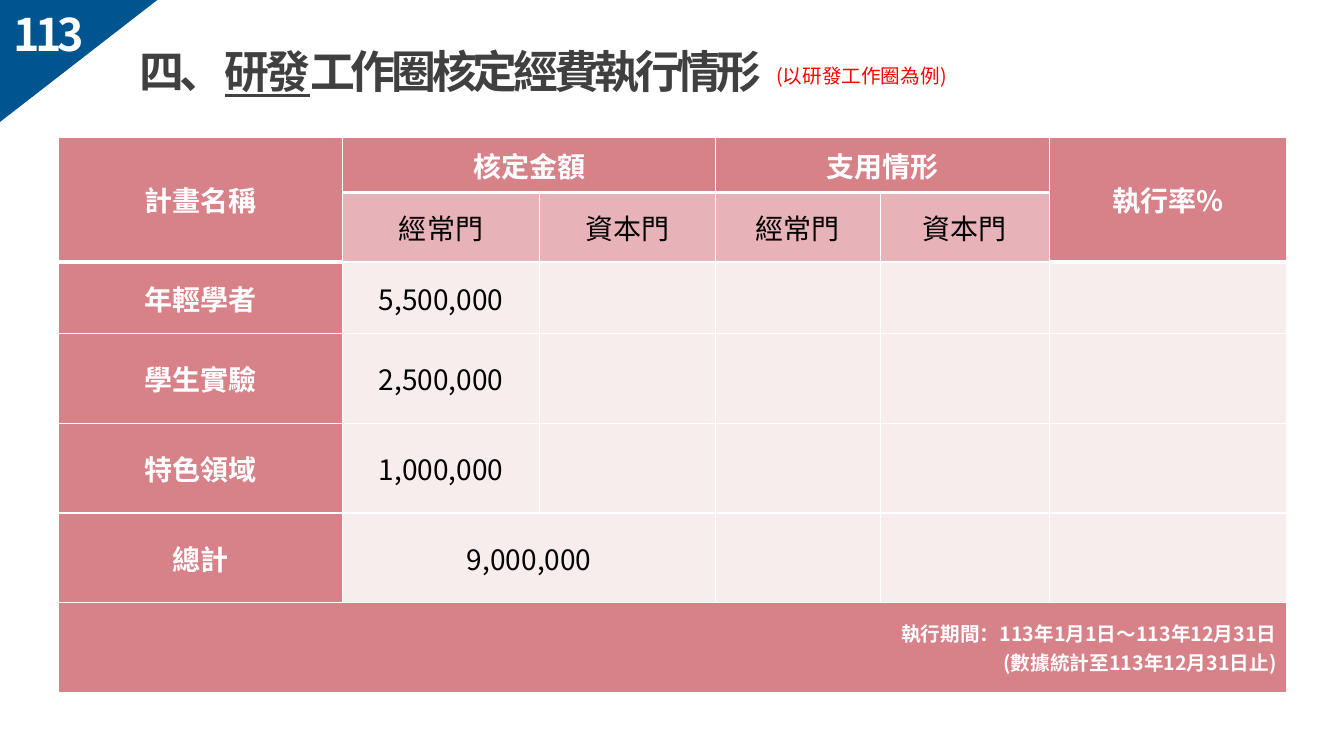
import pptx
import pptx.dml.color
import pptx.enum.shapes
import pptx.enum.text
import pptx.oxml
import pptx.oxml.ns
import pptx.util

RGBColor = pptx.dml.color.RGBColor
Inches = pptx.util.Inches
Pt = pptx.util.Pt
ANCHOR = pptx.enum.text.MSO_ANCHOR
ALIGN = pptx.enum.text.PP_ALIGN

FONT = "Noto Sans CJK SC"
NAVY = RGBColor(0x00, 0x54, 0x90)
WHITE = RGBColor(0xFF, 0xFF, 0xFF)
BLACK = RGBColor(0x00, 0x00, 0x00)
GREY = RGBColor(0x40, 0x40, 0x40)
RED = RGBColor(0xFF, 0x00, 0x00)
ROSE = RGBColor(0xD7, 0x81, 0x89)
PINK = RGBColor(0xE7, 0xB3, 0xB8)
PALE = RGBColor(0xF8, 0xED, 0xED)

COLS = [2.82, 1.95, 1.75, 1.63, 1.68, 2.35]
ROWS = [0.55, 0.69, 0.71] + [0.89] * 4
GRID = [
    ["計畫名稱", "核定金額", "", "支用情形", "", "執行率%"],
    ["", "經常門", "資本門", "經常門", "資本門", ""],
    ["年輕學者", "5,500,000"],
    ["學生實驗", "2,500,000"],
    ["特色領域", "1,000,000"],
    ["總計", "9,000,000"],
    ["執行期間：113年1月1日～113年12月31日\n(數據統計至113年12月31日止)"],
]
MERGES = [(0, 0, 1, 0), (0, 1, 0, 2), (0, 3, 0, 4), (0, 5, 1, 5), (5, 1, 5, 2), (6, 0, 6, 5)]


def add_text(p, text, size=20, color=BLACK, bold=False, underline=False, spacing=0):
    """Add a formatted run to a paragraph."""
    r = p.add_run()
    r.text = text
    f = r.font
    f.name, f.size, f.bold, f.underline = FONT, Pt(size), bold, underline
    f.color.rgb = color
    rPr = r._r.get_or_add_rPr()
    if spacing:
        rPr.set("spc", str(spacing * 100))
    ea = pptx.oxml.parse_xml(f'<a:ea {pptx.oxml.ns.nsdecls("a")} typeface="{FONT}"/>')
    rPr.find(pptx.oxml.ns.qn("a:latin")).addnext(ea)


def place(sp, x, y, w, h):
    """Move a shape to a box in inches."""
    sp.left, sp.top, sp.width, sp.height = (Inches(v) for v in (x, y, w, h))


def add_heading(sp, box, runs, color):
    """Fill a shape with a tight bold heading of (text, underline) runs."""
    place(sp, *box)
    tf = sp.text_frame
    tf.word_wrap = True
    tf.auto_size = pptx.enum.text.MSO_AUTO_SIZE.NONE
    tf.vertical_anchor = ANCHOR.BOTTOM
    tf.margin_left = tf.margin_right = tf.margin_top = tf.margin_bottom = 0
    p = tf.paragraphs[0]
    p.alignment = ALIGN.LEFT
    p.line_spacing, p.space_before = Pt(50), Pt(6)
    pPr = p._p.get_or_add_pPr()
    pPr.set("marL", str(Inches(0.78)))
    pPr.set("indent", "0")
    for text, underline in runs:
        add_text(p, text, size=32, color=color, bold=True, underline=underline, spacing=-3)


def add_corner(s, w, h):
    """Draw the corner triangle and the year inside it."""
    sp = s.shapes.add_shape(pptx.enum.shapes.MSO_SHAPE.RIGHT_TRIANGLE, 0, 0, 0, 0)
    place(sp, (w - h) / 2, (h - w) / 2, h, w)
    sp.rotation = 90
    sp.shadow.inherit = False
    sp.fill.solid()
    sp.fill.fore_color.rgb = NAVY
    sp.line.fill.background()
    year = s.shapes.add_textbox(0, 0, 0, 0)
    add_heading(year, (-0.65, 0.13, 1.87, 0.47), [("113", False)], WHITE)


def add_title(s, x, y, w, h):
    """Set the title and the red remark beside it."""
    runs = [("四、", False), ("研發", True), ("工作圈核定經費執行情形", False)]
    add_heading(s.shapes.title, (x, y, w, h), runs, GREY)
    note = s.shapes.add_textbox(0, 0, 0, 0)
    place(note, x + 7, y + 0.12, 1.9, 0.34)
    note.text_frame.word_wrap = True
    p = note.text_frame.paragraphs[0]
    p.line_spacing = 0.85
    add_text(p, "(以研發工作圈為例)", size=14, color=RED)


def format_cell(cell, text, fill, bottom, **fmt):
    """Give a cell its white borders, fill and centred or right text."""
    tcPr = cell._tc.get_or_add_tcPr()
    for side, width in (("L", 1), ("R", 1), ("T", 1), ("B", bottom)):
        tcPr.append(pptx.oxml.parse_xml(
            f'<a:ln{side} {pptx.oxml.ns.nsdecls("a")} w="{Pt(width)}"><a:solidFill>'
            f'<a:srgbClr val="{WHITE}"/></a:solidFill></a:ln{side}>'))
    cell.fill.solid()
    cell.fill.fore_color.rgb = fill
    cell.vertical_anchor = ANCHOR.MIDDLE
    align = fmt.pop("align", ALIGN.CENTER)
    for i, line in enumerate(text.split("\n") if text else []):
        p = cell.text_frame.add_paragraph() if i else cell.text_frame.paragraphs[0]
        p.alignment = align
        add_text(p, line, **fmt)


def add_budget(s, x, y):
    """Build the budget table from its grid."""
    tbl = s.shapes.add_table(len(ROWS), len(COLS), Inches(x), Inches(y),
                             Inches(sum(COLS)), Inches(sum(ROWS))).table
    tbl.first_row = tbl.horz_banding = False
    for col, w in zip(tbl.columns, COLS):
        col.width = Inches(w)
    for row, h in zip(tbl.rows, ROWS):
        row.height = Inches(h)
    for r1, c1, r2, c2 in MERGES:
        tbl.cell(r1, c1).merge(tbl.cell(r2, c2))
    last = len(ROWS) - 1
    for r, texts in enumerate(GRID):
        for c in range(len(COLS)):
            text = texts[c] if c < len(texts) else ""
            edge = r < 2 and c in (0, 5)
            head = r in (0, last) or c == 0 or edge
            fill = ROSE if head else PINK if r == 1 else PALE
            fmt = {"color": WHITE if head else BLACK, "bold": head}
            if r == last:
                fmt.update(size=14, align=ALIGN.RIGHT)
            format_cell(tbl.cell(r, c), text, fill, 3 if r == 0 or edge else 1, **fmt)


def main():
    """Build and save the slide."""
    prs = pptx.Presentation()
    prs.slide_width, prs.slide_height = Inches(13.33), Inches(7.5)
    s = prs.slides.add_slide(prs.slide_layouts[5])
    add_corner(s, 1.56, 1.21)
    add_title(s, 0.6, 0.5, 9.99, 0.47)
    add_budget(s, 0.58, 1.36)
    prs.save("out.pptx")


if __name__ == "__main__":
    main()
